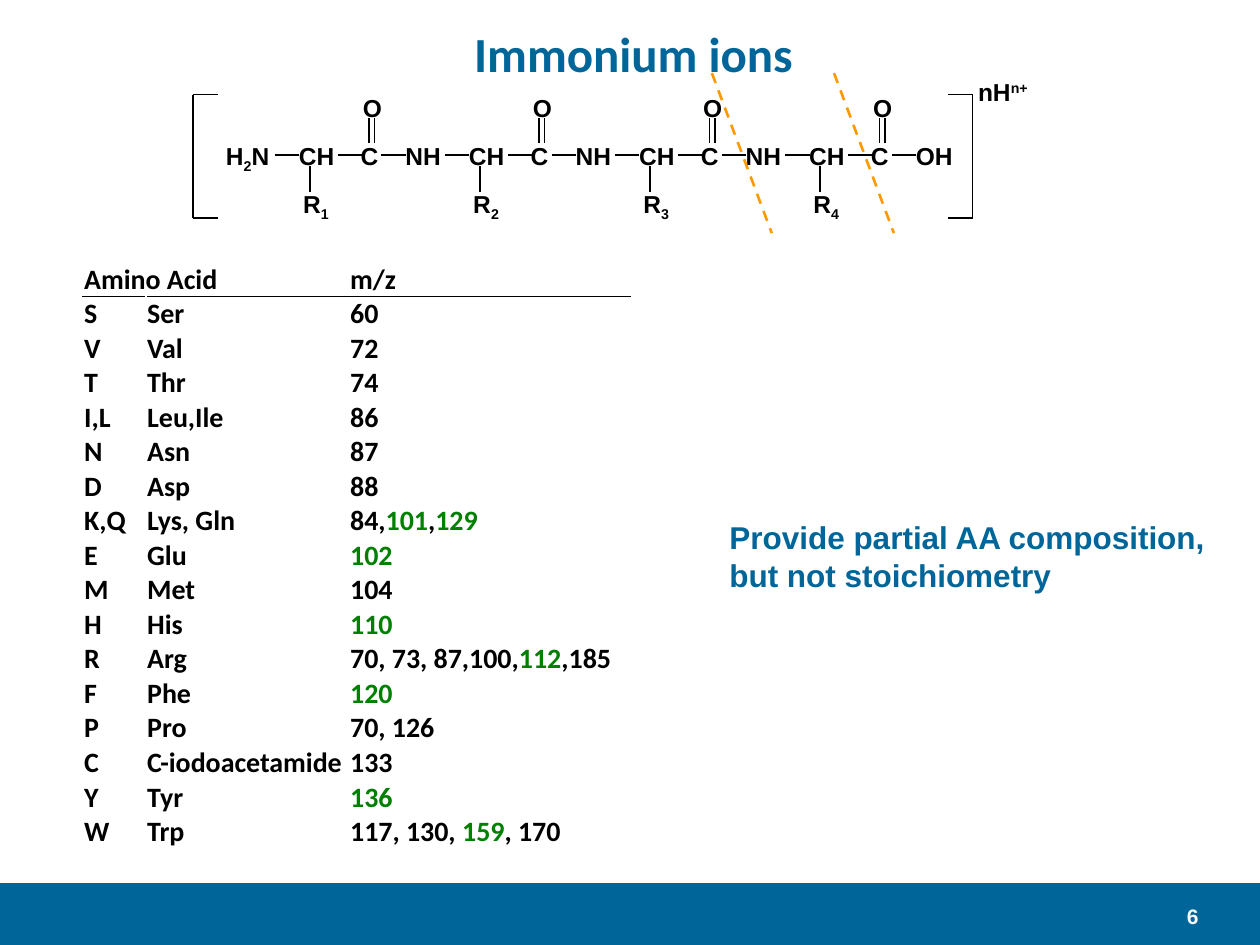
from lxml import etree
from pptx import Presentation
from pptx.dml.color import RGBColor
from pptx.enum import dml, shapes, text
from pptx.oxml import ns
from pptx.util import Pt

BLUE, GREEN, ORANGE, BLACK = "006699", "008000", "FF9900", "000000"
ATOM = dict(name="Arial", size=Pt(14), bold=True)
CELL = dict(name="Calibri", size=Pt(16), bold=True)
STEP = 97.2  # width of one residue

ROWS = [
    ("S", "Ser", "60"), ("V", "Val", "72"), ("T", "Thr", "74"),
    ("I,L", "Leu,Ile", "86"), ("N", "Asn", "87"), ("D", "Asp", "88"),
    ("K,Q", "Lys, Gln", "84,|101|,|129"), ("E", "Glu", "|102"),
    ("M", "Met", "104"), ("H", "His", "|110"),
    ("R", "Arg", "70, 73, 87,100,|112|,185"), ("F", "Phe", "|120"),
    ("P", "Pro", "70, 126"), ("C", "C-iodoacetamide", "133"),
    ("Y", "Tyr", "|136"), ("W", "Trp", "117, 130, |159|, 170"),
]


def tint(code):
    return RGBColor.from_string(code)


def write(para, words, form, color=BLACK, alt=None, shift=None):
    """Add runs; every second part between bars takes alt colour or shift."""
    for i, part in enumerate(words.split("|")):
        if not part:
            continue
        run = para.add_run()
        run.text = part
        for key, val in form.items():
            setattr(run.font, key, val)
        odd = i % 2
        run.font.color.rgb = tint(alt if odd and alt else color)
        if odd and shift:
            run._r.get_or_add_rPr().set("baseline", str(shift * 1000))


def label(home, box, words, form, align="CENTER", wrap=False, **more):
    frame = home.add_textbox(*map(Pt, box)).text_frame
    frame.word_wrap = wrap
    for i, line in enumerate(words.split("\n")):
        para = frame.add_paragraph() if i else frame.paragraphs[0]
        para.alignment = getattr(text.PP_ALIGN, align)
        write(para, line, form, **more)
    return frame


def stroke(home, x1, y1, x2, y2, color=BLACK, width=1, dash=None):
    line = home.add_connector(shapes.MSO_CONNECTOR.STRAIGHT,
                              Pt(x1), Pt(y1), Pt(x2), Pt(y2))
    line.line.color.rgb = tint(color)
    line.line.width = Pt(width)
    if dash:
        line.line.dash_style = dash
    etree.SubElement(line._element.spPr, ns.qn("a:effectLst"))


def title(slide, box):
    head = slide.shapes.title
    for key, val in zip(("left", "top", "width", "height"), box):
        setattr(head, key, Pt(val))
    frame = head.text_frame
    frame.vertical_anchor = text.MSO_ANCHOR.MIDDLE
    para = frame.paragraphs[0]
    para.alignment = text.PP_ALIGN.CENTER
    write(para, "Immonium ions", dict(CELL, size=Pt(28)), BLUE)


def footer(slide, box):
    x, y, w, h = box
    bar = slide.shapes.add_shape(shapes.MSO_SHAPE.RECTANGLE, *map(Pt, box))
    bar.shadow.inherit = False
    bar.fill.solid()
    bar.fill.fore_color.rgb = tint(BLUE)
    bar.line.fill.background()
    label(slide.shapes, (x + w - 78, y + 8, 50, 18), "6",
          dict(ATOM, size=Pt(12)), "RIGHT", True, color="F8F8F8")


def chain(slide, box):
    x, y, w, h = box
    home = slide.shapes.add_group_shape().shapes
    # Backbone atoms, spaced by tab stops
    words = "H|2|N" + "\tCH\tC\tNH" * 3 + "\tCH\tC\tOH"
    frame = label(home, (x, y + 27.5, w, 24.5), words, ATOM, "LEFT", True,
                  shift=-25)
    stops = etree.Element(ns.qn("a:tabLst"))
    for k in range(4):
        for spot in (41.7, 77, 102.6):
            etree.SubElement(stops, ns.qn("a:tab"),
                             pos=str(int(Pt(spot + k * STEP))), algn="l")
    frame.paragraphs[0]._p.get_or_add_pPr().insert(0, stops)
    # Bonds and side groups of each residue
    for k in range(4):
        left = x + 35 + k * STEP
        for gap in (0, 36, 61):
            stroke(home, left + gap, y + 39, left + gap + 14, y + 39)
        stroke(home, left + 20, y + 60, left + 20, y + 45.5)
        for gap in (54, 57):
            stroke(home, left + gap, y + 32, left + gap, y + 18)
        label(home, (left + 8.6, y + 55, 30, 24.5), f"R|{k + 1}", ATOM,
              shift=-25)
        label(home, (left + 42.8, y, 26, 24.5), "O", ATOM)


def bracket(slide, box):
    x, y, w, h = box
    for side, turn in ((x, 14), (x + w, -14)):
        home = slide.shapes.add_group_shape().shapes
        stroke(home, side, y, side, y + h)
        for level in (y, y + h):
            stroke(home, side, level, side + turn, level)
    label(slide.shapes, (x + w - 5, y - 13.7, 44.6, 24.5), "nH|n+", ATOM,
          shift=30)


def cuts(slide, box):
    x, y, w, h = box
    for left in (x, x + w - 34.2):
        stroke(slide.shapes, left, y, left + 34.2, y + h, ORANGE, 1.5,
               dml.MSO_LINE.DASH)


def edge(cell, side):
    line = etree.SubElement(cell._tc.get_or_add_tcPr(), ns.qn("a:" + side),
                            w=str(int(Pt(0.5))))
    fill = etree.SubElement(line, ns.qn("a:solidFill"))
    etree.SubElement(fill, ns.qn("a:srgbClr"), val=BLACK)


def masses(slide, box):
    rows = [("Amino Acid", "", "m/z")] + ROWS
    grid = slide.shapes.add_table(len(rows), 3, *map(Pt, box)).table
    grid.first_row = grid.horz_banding = False
    for col, wide in zip(grid.columns, (36, 116, 160.5)):
        col.width = Pt(wide)
    for i, row in enumerate(rows):
        grid.rows[i].height = Pt(box[3] / len(rows))
        for j, words in enumerate(row):
            cell = grid.cell(i, j)
            if i < 2:
                edge(cell, "lnT" if i else "lnB")
            cell.fill.background()
            cell.vertical_anchor = text.MSO_ANCHOR.BOTTOM
            for side, gap in dict(left=.6, right=.6, top=.2, bottom=0).items():
                setattr(cell, "margin_" + side, Pt(gap))
            write(cell.text_frame.paragraphs[0], words, CELL, alt=GREEN)
    grid.cell(0, 0).merge(grid.cell(0, 1))


def note(slide, box):
    label(slide.shapes, box,
          "Provide partial AA composition,\nbut not stoichiometry",
          dict(ATOM, size=Pt(18)), "LEFT", color=BLUE)


def main():
    deck = Presentation()
    deck.slide_width, deck.slide_height = Pt(720), Pt(540)
    slide = deck.slides.add_slide(deck.slide_layouts[5])
    footer(slide, (0, 504.7, 720, 35.3))
    title(slide, (12, 12, 700, 36))
    chain(slide, (122, 49.5, 433, 80))
    bracket(slide, (110.5, 54, 445.3, 70.8))
    cuts(slide, (406.8, 41.8, 104, 91.4))
    masses(slide, (47.5, 149.8, 312.5, 335.6))
    note(slide, (409.7, 292.3, 290, 51))
    deck.save("out.pptx")


if __name__ == "__main__":
    main()
